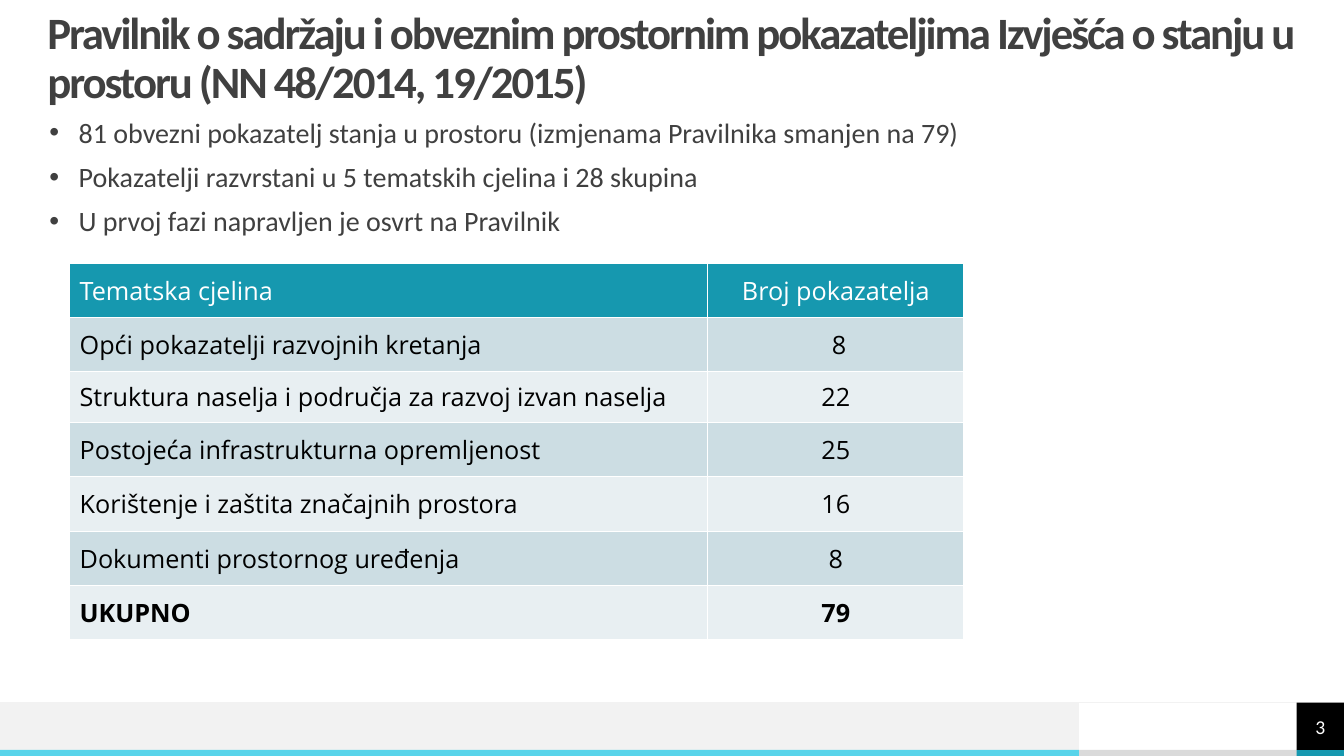
from pptx import Presentation
from pptx.dml.color import RGBColor
from pptx.enum.shapes import MSO_CONNECTOR, MSO_SHAPE
from pptx.enum.text import MSO_ANCHOR, PP_ALIGN
from pptx.oxml.ns import qn
from pptx.util import Inches, Pt
from lxml import etree

RECT = MSO_SHAPE.RECTANGLE
STRAIGHT = MSO_CONNECTOR.STRAIGHT
MIDDLE, TOP = MSO_ANCHOR.MIDDLE, MSO_ANCHOR.TOP
LEFT, CENTER = PP_ALIGN.LEFT, PP_ALIGN.CENTER

COLORS = {
    "text": "404040", "black": "000000", "white": "FFFFFF",
    "teal": "1698AF", "cyan": "58D4EA", "gray": "DADADA", "pale": "F2F2F2",
    "band_dark": "CCDDE3", "band_light": "E8EFF2",
}
TITLE = ("Pravilnik o sadržaju i obveznim prostornim pokazateljima "
         "Izvješća o stanju u prostoru (NN 48/2014, 19/2015)")
BULLETS = [
    "81 obvezni pokazatelj stanja u prostoru (izmjenama Pravilnika smanjen na 79)",
    "Pokazatelji razvrstani u 5 tematskih cjelina i 28 skupina",
    "U prvoj fazi napravljen je osvrt na Pravilnik",
]
ROWS = [
    ("Tematska cjelina", "Broj pokazatelja"),
    ("Opći pokazatelji razvojnih kretanja", " 8"),
    ("Struktura naselja i područja za razvoj izvan naselja", "22"),
    ("Postojeća infrastrukturna opremljenost", "25"),
    ("Korištenje i zaštita značajnih prostora", "16"),
    ("Dokumenti prostornog uređenja", "8"),
    ("UKUPNO", "79"),
]
COL_WIDTHS = [6.33, 2.54]
ROW_HEIGHTS = [0.54, 0.54, 0.5, 0.54, 0.54, 0.54, 0.54]


def rgb(name):
    return RGBColor.from_string(COLORS[name])


def add_run(p, text, size, color, font="Calibri", bold=False):
    r = p.add_run()
    r.text = text
    r.font.size = Pt(size)
    r.font.name = font
    r.font.bold = bold
    r.font.color.rgb = rgb(color)
    return r


def add_rect(s, x, y, w, h, color):
    sp = s.shapes.add_shape(RECT, Inches(x), Inches(y), Inches(w), Inches(h))
    sp.shadow.inherit = False
    sp.fill.solid()
    sp.fill.fore_color.rgb = rgb(color)
    sp.line.fill.background()
    return sp


def add_line(s, x1, y1, x2, y2, color, width):
    line = s.shapes.add_connector(
        STRAIGHT, Inches(x1), Inches(y1), Inches(x2), Inches(y2))
    line.line.color.rgb = rgb(color)
    line.line.width = Pt(width)
    etree.SubElement(line._element.spPr, qn("a:effectLst"))


def add_text_frame(s, x, y, w, h, anchor):
    tf = s.shapes.add_textbox(
        Inches(x), Inches(y), Inches(w), Inches(h)).text_frame
    tf.word_wrap = True
    tf.vertical_anchor = anchor
    tf.margin_left = tf.margin_right = tf.margin_top = tf.margin_bottom = 0
    return tf


def add_title(s):
    p = add_text_frame(s, 0.47, 0, 12.39, 1.18, MIDDLE).paragraphs[0]
    p.line_spacing = 0.9
    r = add_run(p, TITLE, 32, "text", bold=True)
    r.font._element.set("spc", "-150")


def add_bullets(s):
    tf = add_text_frame(s, 0.49, 1.18, 11.03, 1.22, TOP)
    for i, text in enumerate(BULLETS):
        p = tf.add_paragraph() if i else tf.paragraphs[0]
        pPr = p._p.get_or_add_pPr()
        pPr.set("marL", str(Inches(0.29)))
        pPr.set("indent", str(Inches(-0.29)))
        etree.SubElement(pPr, qn("a:buFont"), typeface="Arial")
        etree.SubElement(pPr, qn("a:buChar"), char="•")
        p.line_spacing = 0.9
        if i:
            p.space_before = Pt(10)
        add_run(p, text, 20, "text")


def set_borders(cell, color, width):
    tcPr = cell._tc.get_or_add_tcPr()
    for i, side in enumerate(("lnL", "lnR", "lnT", "lnB")):
        ln = etree.Element(qn(f"a:{side}"), w=str(Pt(width)))
        fill = etree.SubElement(ln, qn("a:solidFill"))
        etree.SubElement(fill, qn("a:srgbClr"), val=COLORS[color])
        tcPr.insert(i, ln)


def add_indicator_table(s):
    table = s.shapes.add_table(
        len(ROWS), len(COL_WIDTHS), Inches(0.69), Inches(2.61),
        Inches(sum(COL_WIDTHS)), Inches(sum(ROW_HEIGHTS))).table
    for column, width in zip(table.columns, COL_WIDTHS):
        column.width = Inches(width)
    for i, (row, height) in enumerate(zip(table.rows, ROW_HEIGHTS)):
        row.height = Inches(height)
        band = "teal" if i == 0 else "band_dark" if i % 2 else "band_light"
        for j, cell in enumerate(row.cells):
            cell.fill.solid()
            cell.fill.fore_color.rgb = rgb(band)
            cell.vertical_anchor = MIDDLE
            set_borders(cell, "white", 1)
            p = cell.text_frame.paragraphs[0]
            p.alignment = CENTER if j else LEFT
            add_run(p, ROWS[i][j], 18, "black" if i else "white",
                    "Open Sans", i == len(ROWS) - 1)


def add_footer(s):
    add_rect(s, 10.7, 7.44, 2.17, 0.06, "gray")
    add_rect(s, 0, 6.97, 10.7, 0.47, "pale")
    add_rect(s, 0, 7.44, 10.7, 0.06, "cyan")
    add_rect(s, 12.86, 7.44, 0.47, 0.06, "teal")
    add_line(s, 13.33, 6.97, 0, 6.97, "pale", 0.5)


def add_page_number(s):
    tf = add_rect(s, 12.86, 6.97, 0.47, 0.47, "black").text_frame
    tf.vertical_anchor = MIDDLE
    p = tf.paragraphs[0]
    p.alignment = CENTER
    add_run(p, "3", 14, "white")


def main():
    prs = Presentation()
    prs.slide_width = Inches(13.33)
    prs.slide_height = Inches(7.5)
    s = prs.slides.add_slide(prs.slide_layouts[6])
    add_footer(s)
    add_title(s)
    add_bullets(s)
    add_indicator_table(s)
    add_page_number(s)
    prs.save("out.pptx")


if __name__ == "__main__":
    main()
